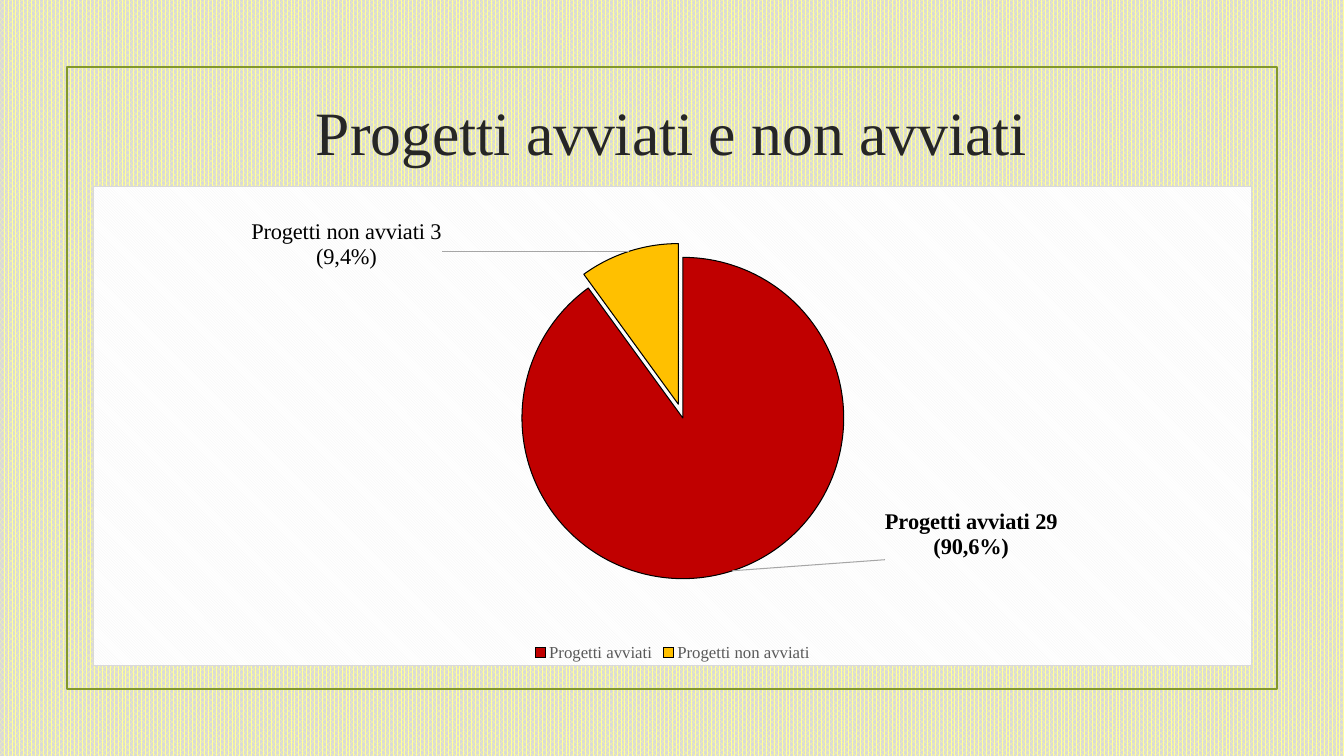
"""Build the slide showing started and not started projects as a pie chart."""
from dataclasses import dataclass

import lxml.etree
import pptx
import pptx.chart.data
import pptx.dml.color
import pptx.enum.chart
import pptx.enum.dml
import pptx.enum.shapes
import pptx.enum.text
import pptx.oxml
import pptx.oxml.ns
import pptx.util

EMU_PER_PX = 914400 / 100.8
FONT = "Times New Roman"
COLORS = {
    "yellow": "FFFF99", "grey": "D9D9D9", "green": "83992A", "title": "262626",
    "legend": "595959", "black": "000000", "red": "C00000", "amber": "FFC000",
    "hatch": "F2F2F2", "white": "FFFFFF", "leader": "A6A6A6",
}


@dataclass(frozen=True)
class Box:
    left: int
    top: int
    width: int
    height: int

    def emu(self) -> tuple[int, ...]:
        return tuple(px(n) for n in (self.left, self.top, self.width, self.height))


@dataclass(frozen=True)
class Slice:
    name: str
    value: int
    color: str
    label: tuple[str, str]
    shift_x: float
    shift_y: float
    bold: bool = False
    explosion: int = 0


FRAME = Box(67, 67, 1210, 622)
TITLE = Box(143, 75, 1058, 112)
CHART = Box(93, 186, 1159, 480)
PIE = Box(429, 71, 322, 322)
SLICES = [
    Slice("Progetti avviati", 90, "red", ("Progetti avviati 29", "(90,6%)"),
          0.13, -0.14, bold=True),
    Slice("Progetti non avviati", 10, "amber", ("Progetti non avviati 3", "(9,4%)"),
          -0.16, 0.05, explosion=9),
]


def px(n: int) -> int:
    return pptx.util.Emu(round(n * EMU_PER_PX))


def rgb(name: str) -> pptx.dml.color.RGBColor:
    return pptx.dml.color.RGBColor.from_string(COLORS[name])


def xml(source: str) -> lxml.etree._Element:
    tag, rest = source.split(">", 1)
    closing = "/" if tag.endswith("/") else ""
    ns = pptx.oxml.ns.nsdecls("c", "a")
    return pptx.oxml.parse_xml(f"{tag.rstrip('/')} {ns}{closing}>{rest}")


def layout(x: float, y: float, extra: str = "") -> lxml.etree._Element:
    return xml(f'<c:layout><c:manualLayout>{extra}<c:x val="{x:.3f}"/>'
               f'<c:y val="{y:.3f}"/></c:manualLayout></c:layout>')


def style(font, *, size: int, color: str, bold: bool = False) -> None:
    font.name = FONT
    font.size = pptx.util.Pt(size)
    font.bold = bold
    font.color.rgb = rgb(color)


def write(p, text: str, **fmt) -> None:
    p.alignment = pptx.enum.text.PP_ALIGN.CENTER
    r = p.add_run()
    r.text = text
    style(r.font, **fmt)


def set_background(s) -> None:
    fill = s.background.fill
    fill.patterned()
    fill.pattern = pptx.enum.dml.MSO_PATTERN.PERCENT_75
    fill.fore_color.rgb = rgb("yellow")
    fill.back_color.rgb = rgb("grey")


def add_frame(s) -> None:
    sp = s.shapes.add_shape(pptx.enum.shapes.MSO_SHAPE.RECTANGLE, *FRAME.emu())
    sp.shadow.inherit = False
    sp.fill.background()
    sp.line.color.rgb = rgb("green")
    sp.line.width = pptx.util.Pt(1.25)


def add_title(s) -> None:
    sp = s.shapes.title
    sp.left, sp.top, sp.width, sp.height = TITLE.emu()
    tf = sp.text_frame
    tf.vertical_anchor = pptx.enum.text.MSO_ANCHOR.MIDDLE
    write(tf.paragraphs[0], "Progetti avviati e non avviati", size=44, color="title")


def format_slice(point, part: Slice) -> None:
    point.format.fill.solid()
    point.format.fill.fore_color.rgb = rgb(part.color)
    point.format.line.color.rgb = rgb("black")
    point.format.line.width = pptx.util.Pt(0.75)
    label = point.data_label
    tf = label.text_frame
    for i, text in enumerate(part.label):
        p = tf.add_paragraph() if i else tf.paragraphs[0]
        write(p, text, size=16, color="black", bold=part.bold)
    label.position = pptx.enum.chart.XL_LABEL_POSITION.OUTSIDE_END


def format_chart_area(root) -> None:
    chart = root.xpath("c:chart")[0]
    chart.addprevious(xml('<c:roundedCorners val="0"/>'))
    chart.addnext(xml(
        '<c:spPr><a:pattFill prst="dkDnDiag">'
        f'<a:fgClr><a:srgbClr val="{COLORS["hatch"]}"/></a:fgClr>'
        f'<a:bgClr><a:srgbClr val="{COLORS["white"]}"/></a:bgClr></a:pattFill>'
        f'<a:ln w="9525"><a:solidFill><a:srgbClr val="{COLORS["grey"]}"/>'
        '</a:solidFill></a:ln></c:spPr>'))


def place_pie(root) -> None:
    area = root.xpath(".//c:plotArea")[0]
    for old in area.xpath("c:layout"):
        area.remove(old)
    pie = layout(PIE.left / CHART.width, PIE.top / CHART.height,
                 '<c:layoutTarget val="inner"/><c:xMode val="edge"/><c:yMode val="edge"/>')
    for tag, share in (("w", PIE.width / CHART.width), ("h", PIE.height / CHART.height)):
        pie[0].append(xml(f'<c:{tag} val="{share:.3f}"/>'))
    area.insert(0, pie)


def place_labels(root) -> None:
    for i, part in enumerate(SLICES):
        idx = root.xpath(f".//c:dLbl/c:idx[@val='{i}']")[0]
        idx.addnext(layout(part.shift_x, part.shift_y))
        if part.explosion:
            fill = root.xpath(f".//c:dPt[c:idx/@val='{i}']/c:spPr")[0]
            fill.addprevious(xml(f'<c:explosion val="{part.explosion}"/>'))
    root.xpath(".//c:ser/c:dLbls")[0].append(xml(
        '<c:leaderLines><c:spPr><a:ln w="9525"><a:solidFill>'
        f'<a:srgbClr val="{COLORS["leader"]}"/></a:solidFill></a:ln></c:spPr></c:leaderLines>'))


def add_pie(s) -> None:
    data = pptx.chart.data.CategoryChartData()
    data.categories = [part.name for part in SLICES]
    data.add_series("Series 1", [part.value for part in SLICES])
    chart = s.shapes.add_chart(pptx.enum.chart.XL_CHART_TYPE.PIE, *CHART.emu(), data).chart
    style(chart.font, size=10, color="black")
    chart.has_title = False
    chart.has_legend = True
    chart.legend.position = pptx.enum.chart.XL_LEGEND_POSITION.BOTTOM
    chart.legend.include_in_layout = False
    style(chart.legend.font, size=12, color="legend")
    series = chart.plots[0].series[0]
    for i, part in enumerate(SLICES):
        format_slice(series.points[i], part)
    format_chart_area(chart.element)
    place_pie(chart.element)
    place_labels(chart.element)


def main() -> None:
    prs = pptx.Presentation()
    prs.slide_width, prs.slide_height = px(1344), px(756)
    s = prs.slides.add_slide(prs.slide_layouts[5])
    set_background(s)
    add_frame(s)
    add_title(s)
    add_pie(s)
    prs.save("out.pptx")


if __name__ == "__main__":
    main()
